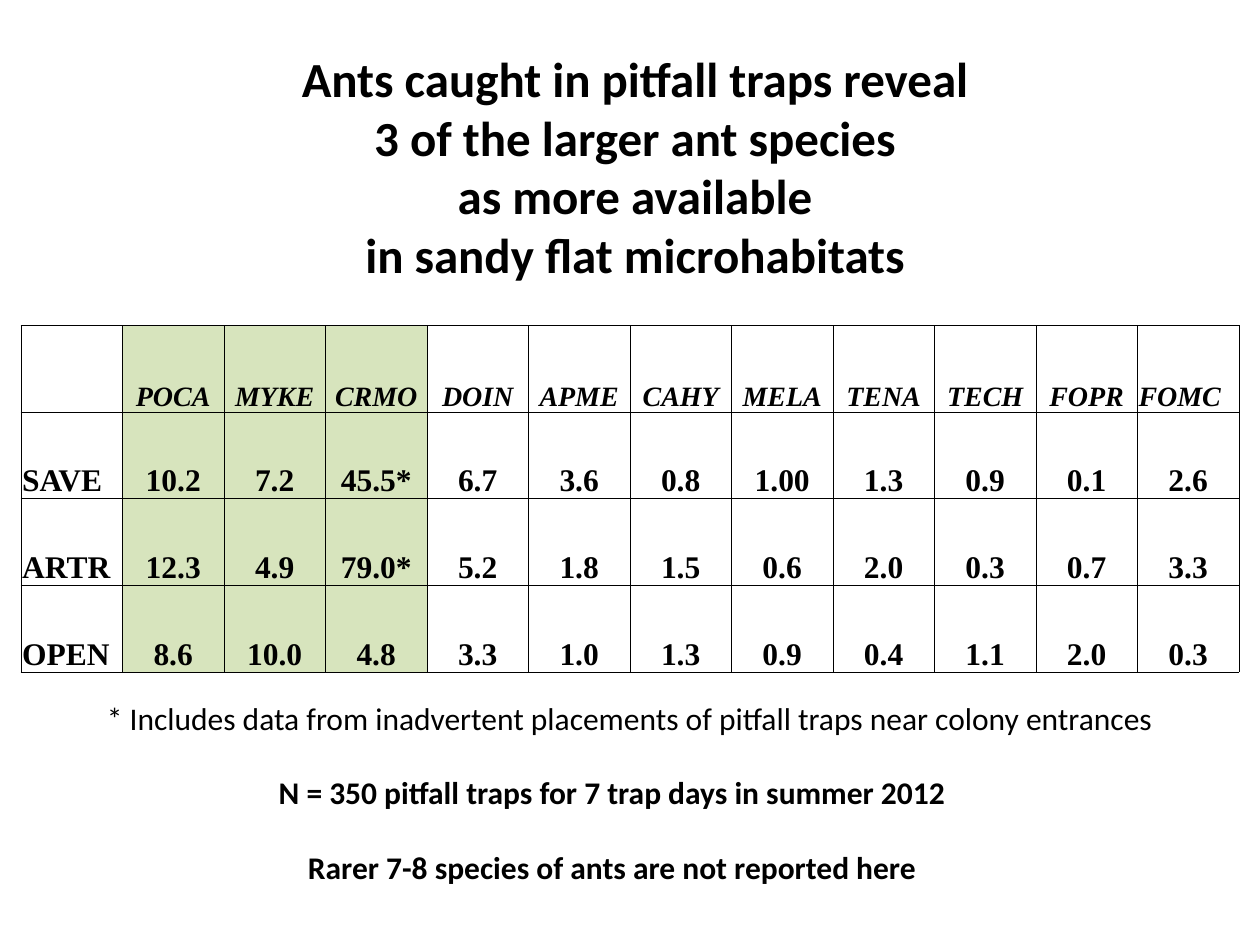
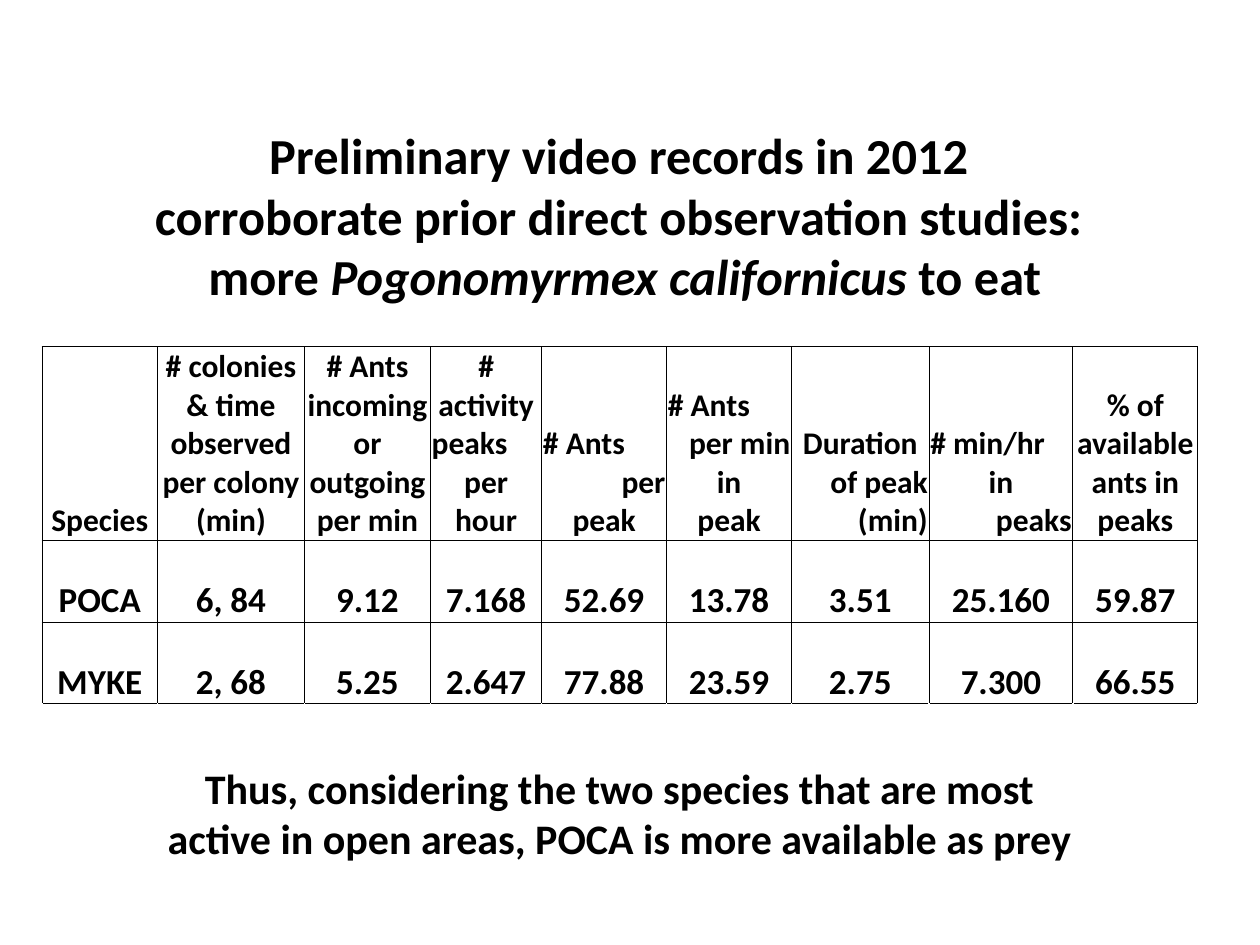
import pptx
import pptx.dml.color
import pptx.enum.text
import pptx.oxml
import pptx.oxml.ns
import pptx.util
from lxml import etree

BLACK = pptx.dml.color.RGBColor(0x00, 0x00, 0x00)
PALE_GREEN = pptx.dml.color.RGBColor(0xD7, 0xE4, 0xBD)
ALIGN = pptx.enum.text.PP_ALIGN
ANCHOR = pptx.enum.text.MSO_ANCHOR
AUTO_SIZE = pptx.enum.text.MSO_AUTO_SIZE
SERIF, SANS = "Times New Roman", "Calibri"

presentation = pptx.Presentation()
presentation.slide_width = pptx.util.Inches(10)
presentation.slide_height = pptx.util.Inches(7.5)
title_only = presentation.slide_layouts[5]

# The slide is a grid of 120 columns and 90 rows of the same size
UNIT = presentation.slide_width / 120


def style_paragraph(paragraph, size, alignment=ALIGN.CENTER, **font_values):
    """Align a paragraph and format its runs and line breaks."""
    paragraph.alignment = alignment
    values = {"name": SANS, "bold": True, "size": pptx.util.Pt(size)} | font_values
    for run in paragraph.runs:
        run.font.color.rgb = BLACK
        for name, value in values.items():
            setattr(run.font, name, value)
    for line_break in paragraph._p.findall(pptx.oxml.ns.qn("a:br")):
        etree.SubElement(line_break, pptx.oxml.ns.qn("a:rPr"), sz=str(round(size * 100)))


def add_plain_table(slide, box, column_widths, row_heights, bordered_rows):
    """Add an unfilled table with thin black borders on its first rows."""
    frame = slide.shapes.add_table(len(row_heights), len(column_widths),
                                   *(round(length * UNIT) for length in box))
    table = frame.table
    table.first_row = table.horz_banding = False
    for column, width in zip(table.columns, column_widths):
        column.width = round(width * UNIT)
    for row, height in zip(table.rows, row_heights):
        row.height = round(height * UNIT)
    for row_index, row in enumerate(table.rows):
        sides = "LRTB" if row_index < bordered_rows else "T"
        for cell in row.cells:
            cell.vertical_anchor = ANCHOR.BOTTOM
            cell.margin_left = cell.margin_right = cell.margin_top = pptx.util.Inches(0.01)
            cell.margin_bottom = 0
            properties = cell._tc.get_or_add_tcPr()
            for side in sides:
                properties.append(pptx.oxml.parse_xml(
                    f'<a:ln{side} {pptx.oxml.ns.nsdecls("a")} w="6350"><a:solidFill>'
                    f'<a:srgbClr val="{BLACK}"/></a:solidFill></a:ln{side}>'))
            cell.fill.background()
    return table


# Titles: box, size, and text parts with their italic setting
titles = [
    ((6, 3.6, 110, 24.4), 28,
     [("Ants caught in pitfall traps reveal \v3 of the larger ant species \v"
       "as more available \vin sandy flat microhabitats ", False)]),
    ((4, 13, 111, 15), 28.8,
     [("Preliminary video records in 2012 \v"
       "corroborate prior direct observation studies: \vmore ", False),
      ("Pogonomyrmex californicus ", True), ("to eat", False)]),
]
for box, size, parts in titles:
    title = presentation.slides.add_slide(title_only).shapes.title
    for name, length in zip(("left", "top", "width", "height"), box):
        setattr(title, name, round(length * UNIT))
    title.text_frame.auto_size = AUTO_SIZE.NONE
    title.text_frame.vertical_anchor = ANCHOR.MIDDLE
    paragraph = title.text_frame.paragraphs[0]
    paragraph.text = parts[0][0]
    for text, italic in parts[1:]:
        paragraph.add_run().text = text
    style_paragraph(paragraph, size)
    for text, italic in parts[1:]:
        for run in paragraph.runs:
            if run.text == text:
                run.font.italic = italic
pitfall_slide, video_slide = presentation.slides

# Pitfall table: ants per species and microhabitat
species = "POCA MYKE CRMO DOIN APME CAHY MELA TENA TECH FOPR FOMC".split()
pitfall_rows = [
    ["", *species],
    "SAVE 10.2 7.2 45.5* 6.7 3.6 0.8 1.00 1.3 0.9 0.1 2.6".split(),
    "ARTR 12.3 4.9 79.0* 5.2 1.8 1.5 0.6 2.0 0.3 0.7 3.3".split(),
    "OPEN 8.6 10.0 4.8 3.3 1.0 1.3 0.9 0.4 1.1 2.0 0.3".split(),
]
larger_species = species[:3]
pitfall_table = add_plain_table(pitfall_slide, (2, 31, 116, 33),
                                [116 / 12] * 12, [33 / 4] * 4, 4)
for row_index, values in enumerate(pitfall_rows):
    is_header = row_index == 0
    for column_index, value in enumerate(values):
        cell = pitfall_table.cell(row_index, column_index)
        cell.text = value
        to_left = column_index == 0 or value == "FOMC"
        style_paragraph(cell.text_frame.paragraphs[0], 16 if is_header else 18,
                        ALIGN.LEFT if to_left else ALIGN.CENTER,
                        name=SERIF, italic=is_header)
        if pitfall_rows[0][column_index] in larger_species:
            cell.fill.solid()
            cell.fill.fore_color.rgb = PALE_GREEN

# Video table: "<" and ">" mark header lines set to the left and right
line_alignments = {"<": ALIGN.LEFT, ">": ALIGN.RIGHT}
video_rows = [
    ["Species", "# colonies|& time|observed|per colony|(min)",
     "# Ants|incoming|or|outgoing|per min", "#|activity|<peaks|per|hour",
     "<# Ants|>per|peak", "<# Ants|>per min|in|peak", "Duration|>of peak|>(min)",
     "<# min/hr|in|>peaks", "% of|available|ants in|peaks"],
    ["POCA", "6, 84", "9.12", "7.168", "52.69", "13.78", "3.51", "25.160", "59.87"],
    ["MYKE", "2, 68", "5.25", "2.647", "77.88", "23.59", "2.75", "7.300", "66.55"],
]
video_table = add_plain_table(video_slide, (4, 33, 110, 41.6),
                              [11, 14, 12, 10.6, 11.9, 11.9, 13.1, 13.7, 11.9],
                              [16.4, 7.8, 7.8, 7.8], len(video_rows))
for row_index, values in enumerate(video_rows):
    for column_index, value in enumerate(values):
        text_frame = video_table.cell(row_index, column_index).text_frame
        lines = value.split("|")
        text_frame.text = "\n".join(line.lstrip("<>") for line in lines)
        for line, paragraph in zip(lines, text_frame.paragraphs):
            style_paragraph(paragraph, 18 if row_index == 0 else 20,
                            line_alignments.get(line[0], ALIGN.CENTER))

# Notes below the tables
notes = [
    (pitfall_slide, (9, 66, 103.3, 4.8), 18, False, False, ALIGN.LEFT,
     ["* Includes data from inadvertent placements of pitfall traps near colony entrances"]),
    (pitfall_slide, (25, 73, 66.6, 12.1), 18, True, False, ALIGN.CENTER,
     ["N = 350 pitfall traps for 7 trap days in summer 2012",
      "Rarer 7-8 species of ants are not reported here"]),
    (video_slide, (13, 72, 92, 10.9), 24, True, True, ALIGN.CENTER,
     ["Thus, considering the two species that are most active in open areas, "
      "POCA is more available as prey"]),
]
for slide, box, size, bold, wrap, alignment, lines in notes:
    shape = slide.shapes.add_textbox(*(round(length * UNIT) for length in box))
    text_frame = shape.text_frame
    text_frame.word_wrap = wrap
    text_frame.auto_size = AUTO_SIZE.SHAPE_TO_FIT_TEXT
    text_frame.text = "\n".join(lines)
    for paragraph in text_frame.paragraphs:
        style_paragraph(paragraph, size, alignment, bold=bold)
    for paragraph in text_frame.paragraphs[1:]:
        paragraph.space_before = pptx.util.Pt(21.5)

presentation.save("out.pptx")
